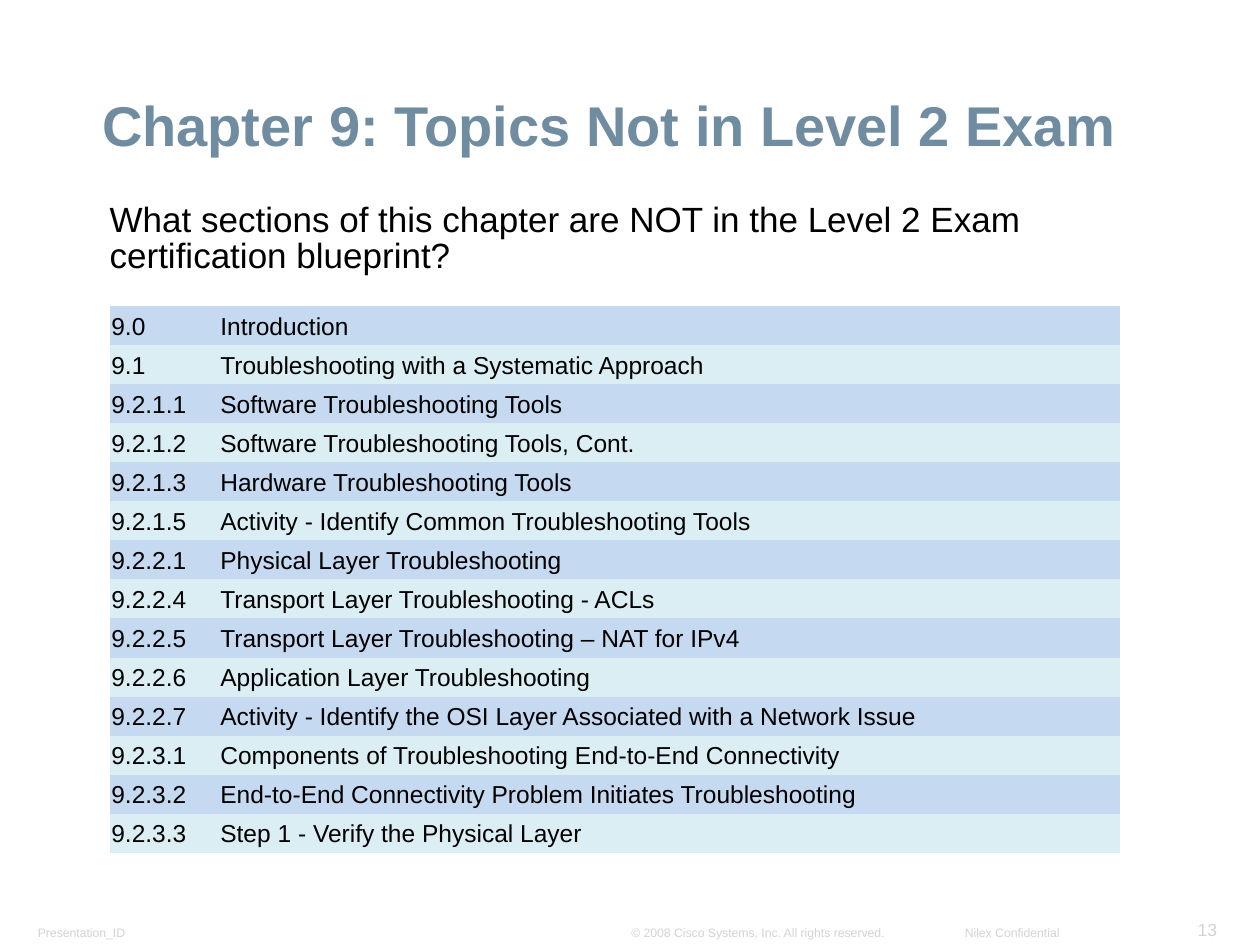
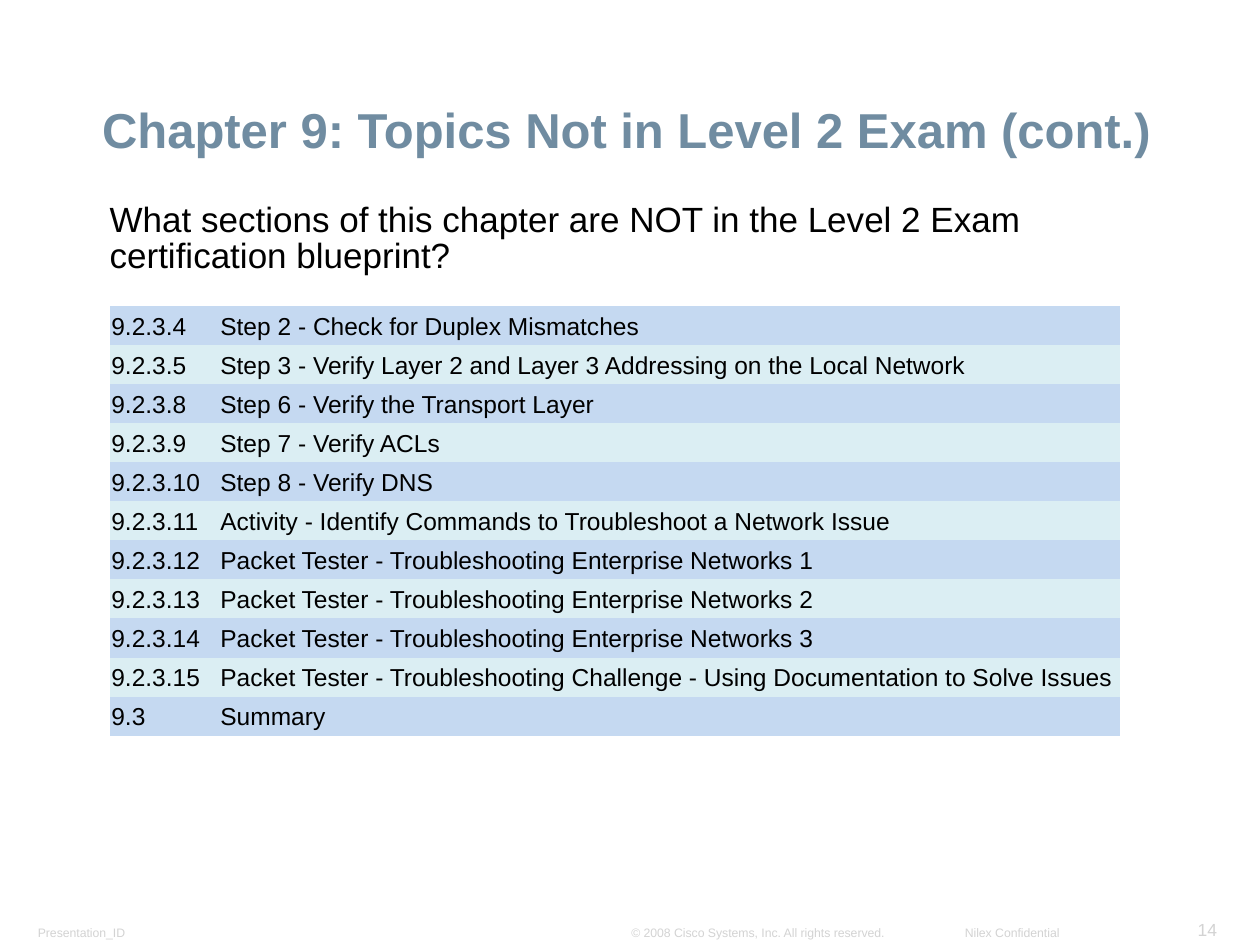
"""Build two slides that list the chapter topics left out of the exam."""
from dataclasses import dataclass
from typing import Any

from pptx import Presentation
from pptx.dml.color import RGBColor
from pptx.enum.text import MSO_ANCHOR, MSO_AUTO_SIZE, PP_ALIGN
from pptx.oxml.ns import qn
from pptx.util import Inches, Pt

WIDE, HIGH = Inches(10), Inches(7.5)
COLS, ROWS = 100, 75
FACE = "Arial"
BLUE, BLACK, GREY = "708CA1", "000000", "D3D3D3"
BANDS = ("C5D9F1", "DBEEF3")
PLAIN = "{2D5ABB26-0587-4C30-8999-92F81FD0307C}"
PAD = {"margin_left": Inches(0.09), "margin_right": Inches(0.09),
       "margin_top": Inches(0.05), "margin_bottom": Inches(0.05)}
SLIM = {"margin_left": Pt(1), "margin_right": Pt(1),
        "margin_top": Pt(1), "margin_bottom": 0,
        "vertical_anchor": MSO_ANCHOR.MIDDLE}
FOOT = {"vertical_anchor": MSO_ANCHOR.BOTTOM,
        "auto_size": MSO_AUTO_SIZE.SHAPE_TO_FIT_TEXT}
LEFT, RIGHT = PP_ALIGN.LEFT, PP_ALIGN.RIGHT
EXAM = "Level 2 Exam"
TITLE = f"Chapter 9: Topics Not in {EXAM}"
QUERY = f"What sections of this chapter are NOT in the {EXAM} certification blueprint?"


@dataclass(frozen=True)
class Box:
    """A place on the grid, in columns and rows."""
    col: float
    row: float
    wide: float
    high: float


@dataclass(frozen=True)
class Label:
    """A text with its place and format."""
    text: str
    box: Box
    size: float
    color: str
    frame: dict[str, Any]
    line: dict[str, Any]
    bold: bool = False


@dataclass(frozen=True)
class Page:
    """The content of one slide."""
    number: int
    title: str
    size: int
    topics: tuple[tuple[str, str], ...]


PAGES = (
    Page(13, TITLE, 32, (
        ("9.0", "Introduction"),
        ("9.1", "Troubleshooting with a Systematic Approach"),
        ("9.2.1.1", "Software Troubleshooting Tools"),
        ("9.2.1.2", "Software Troubleshooting Tools, Cont."),
        ("9.2.1.3", "Hardware Troubleshooting Tools"),
        ("9.2.1.5", "Activity - Identify Common Troubleshooting Tools"),
        ("9.2.2.1", "Physical Layer Troubleshooting"),
        ("9.2.2.4", "Transport Layer Troubleshooting - ACLs"),
        ("9.2.2.5", "Transport Layer Troubleshooting – NAT for IPv4"),
        ("9.2.2.6", "Application Layer Troubleshooting"),
        ("9.2.2.7", "Activity - Identify the OSI Layer Associated with a Network Issue"),
        ("9.2.3.1", "Components of Troubleshooting End-to-End Connectivity"),
        ("9.2.3.2", "End-to-End Connectivity Problem Initiates Troubleshooting"),
        ("9.2.3.3", "Step 1 - Verify the Physical Layer"),
    )),
    Page(14, f"{TITLE} (cont.)", 28, (
        ("9.2.3.4", "Step 2 - Check for Duplex Mismatches"),
        ("9.2.3.5", "Step 3 - Verify Layer 2 and Layer 3 Addressing on the Local Network"),
        ("9.2.3.8", "Step 6 - Verify the Transport Layer"),
        ("9.2.3.9", "Step 7 - Verify ACLs"),
        ("9.2.3.10", "Step 8 - Verify DNS"),
        ("9.2.3.11", "Activity - Identify Commands to Troubleshoot a Network Issue"),
        ("9.2.3.12", "Packet Tester - Troubleshooting Enterprise Networks 1"),
        ("9.2.3.13", "Packet Tester - Troubleshooting Enterprise Networks 2"),
        ("9.2.3.14", "Packet Tester - Troubleshooting Enterprise Networks 3"),
        ("9.2.3.15", "Packet Tester - Troubleshooting Challenge - "
                     "Using Documentation to Solve Issues"),
        ("9.3", "Summary"),
    )),
)


def shade(code: str) -> RGBColor:
    """Turn a hex string into a colour."""
    return RGBColor.from_string(code)


def across(cols: float) -> int:
    """Give the width of some grid columns."""
    return round(WIDE * cols / COLS)


def down(rows: float) -> int:
    """Give the height of some grid rows."""
    return round(HIGH * rows / ROWS)


def place(box: Box) -> tuple[int, int, int, int]:
    """Turn a grid place into slide lengths."""
    return across(box.col), down(box.row), across(box.wide), down(box.high)


def style(item: Any, form: dict[str, Any]) -> None:
    """Set each format value on an item."""
    for key, value in form.items():
        setattr(item, key, value)


def ink(para: Any, text: str, size: float, color: str, bold: bool = False) -> None:
    """Write a text into a paragraph in the shared face."""
    run = para.add_run()
    run.text = text
    style(run.font, {"name": FACE, "size": Pt(size), "bold": bold})
    run.font.color.rgb = shade(color)


def write(slide: Any, label: Label) -> None:
    """Draw one label."""
    frame = slide.shapes.add_textbox(*place(label.box)).text_frame
    style(frame, PAD | {"word_wrap": True} | label.frame)
    para = frame.paragraphs[0]
    style(para, label.line)
    ink(para, label.text, label.size, label.color, label.bold)


def foot(text: str, box: Box, size: float = 7, side: Any = LEFT,
         wrap: bool = False) -> Label:
    """Make a grey footer label."""
    return Label(text, box, size, GREY, FOOT | {"word_wrap": wrap}, {"alignment": side})


def grid(slide: Any, topics: tuple[tuple[str, str], ...]) -> None:
    """Draw the banded table of topics."""
    widths, step = (8.65, 71.5), 3.1
    box = Box(8.7, 24.3, sum(widths), step * len(topics))
    shape = slide.shapes.add_table(len(topics), len(widths), *place(box))
    for mark in shape.element.iter(qn("a:tableStyleId")):
        mark.text = PLAIN
    table = shape.table
    style(table, {"first_row": False, "horz_banding": False})
    for col, width in zip(table.columns, widths):
        col.width = across(width)
    for at, (row, topic) in enumerate(zip(table.rows, topics)):
        row.height = down(step)
        for cell, text in zip(row.cells, topic):
            style(cell, SLIM)
            cell.fill.solid()
            cell.fill.fore_color.rgb = shade(BANDS[at % len(BANDS)])
            ink(cell.text_frame.paragraphs[0], text, 14, BLACK)


def build(slide: Any, page: Page) -> None:
    """Draw one page."""
    labels = (
        foot("Presentation_ID", Box(2.1, 73, 10.5, 2.1), wrap=True),
        foot(str(page.number), Box(94, 72.5, 3.5, 2.6), 10, RIGHT),
        foot("© 2008 Cisco Systems, Inc. All rights reserved.", Box(49.2, 73, 22.1, 2.1)),
        foot("Nilex Confidential", Box(75.4, 73, 9.6, 2.1), side=RIGHT),
        Label(page.title, Box(7.2, 3.9, 89.1, 9.2), page.size, BLUE,
              {"vertical_anchor": MSO_ANCHOR.BOTTOM}, {"line_spacing": 0.9}, True),
        Label(QUERY, Box(7.8, 15.7, 86.8, 4.5), 20, BLACK, {}, {"line_spacing": 0.85}),
    )
    for label in labels:
        write(slide, label)
    grid(slide, page.topics)


def main() -> None:
    """Build and save the deck."""
    deck = Presentation()
    style(deck, {"slide_width": WIDE, "slide_height": HIGH})
    for page in PAGES:
        build(deck.slides.add_slide(deck.slide_layouts[6]), page)
    deck.save("out.pptx")


if __name__ == "__main__":
    main()
